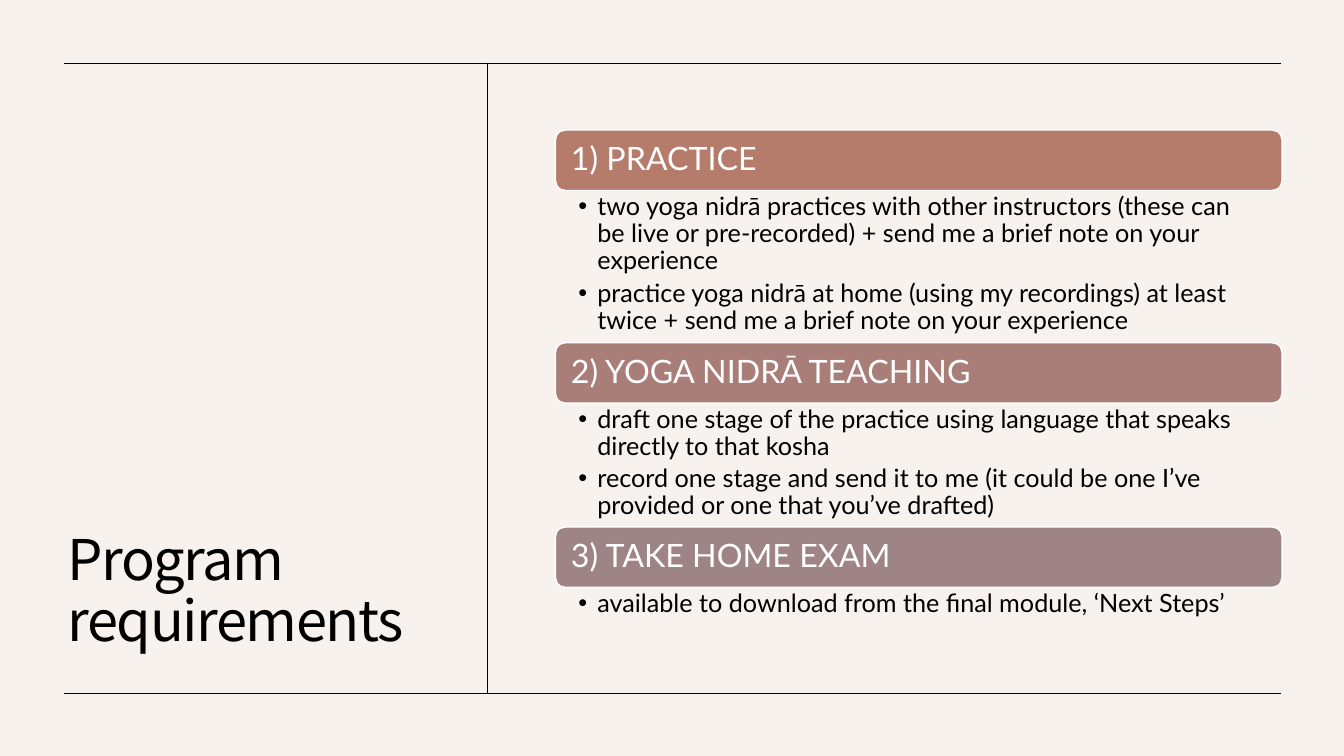
from lxml.etree import SubElement
from pptx import Presentation
from pptx.dml.color import RGBColor
from pptx.enum.shapes import MSO_CONNECTOR, MSO_SHAPE
from pptx.enum.text import MSO_ANCHOR, MSO_AUTO_SIZE, PP_ALIGN
from pptx.oxml.ns import qn
from pptx.util import Pt

TITLE = "Program requirements"
# heading, bar colour, list height, list items
PARTS = [
    ("1) PRACTICE", "clay", 108.7, [
        "two yoga nidrā practices with other instructors (these can be live or "
        "pre-recorded) + send me a brief note on your experience",
        "practice yoga nidrā at home (using my recordings) at least twice + "
        "send me a brief note on your experience",
    ]),
    ("2) YOGA NIDRĀ TEACHING", "rose", 88.4, [
        "draft one stage of the practice using language that speaks directly "
        "to that kosha",
        "record one stage and send it to me (it could be one I’ve provided or "
        "one that you’ve drafted)",
    ]),
    ("3) TAKE HOME EXAM", "mauve", 30.2, [
        "available to download from the final module, ‘Next Steps’",
    ]),
]
COLORS = {"paper": "F7F2EE", "ink": "000000", "white": "FFFFFF",
          "clay": "B57B6B", "rose": "A97D78", "mauve": "9E8484"}

LEFT, RIGHT, TOP, BASE, SPLIT = 45.4, 915.1, 45, 495.4, 348
RULES = [(LEFT, TOP, RIGHT, TOP), (LEFT, BASE, RIGHT, BASE),
         (SPLIT, TOP, SPLIT, BASE)]
LIST_X, LIST_Y, LIST_W, BAR_H = 396.7, 92.9, 519.1, 43.2

FRAME = {"word_wrap": True, "auto_size": MSO_AUTO_SIZE.NONE}
TITLE_BOX = FRAME | {"vertical_anchor": MSO_ANCHOR.BOTTOM}
BAR_BOX = FRAME | {"vertical_anchor": MSO_ANCHOR.MIDDLE,
                   "margin_left": Pt(9), "margin_right": Pt(9),
                   "margin_top": 0, "margin_bottom": 0}
LIST_BOX = FRAME | {"vertical_anchor": MSO_ANCHOR.TOP,
                    "margin_left": Pt(16.5), "margin_right": Pt(13),
                    "margin_top": Pt(2.2), "margin_bottom": Pt(2.2)}
PARA = {"alignment": PP_ALIGN.LEFT, "line_spacing": 0.9,
        "space_before": Pt(0), "space_after": Pt(0)}
ITEM = PARA | {"space_after": Pt(3.6)}
TITLE_FONT = {"name": "Noto Sans CJK KR", "size": Pt(40), "bold": False}
BAR_FONT = {"name": "Lato", "size": Pt(23), "bold": False}
ITEM_FONT = {"name": "Lato", "size": Pt(18), "bold": False}


def apply(obj, values):
    for key, value in values.items():
        setattr(obj, key, value)


def color(name):
    return RGBColor.from_string(COLORS[name])


def paint(fill, name):
    fill.solid()
    fill.fore_color.rgb = color(name)


def place(shape, *box):
    apply(shape, dict(zip(("left", "top", "width", "height"), map(Pt, box))))


def write(shape, lines, box, para, font, tint):
    """Fill a shape with one formatted paragraph per line."""
    frame = shape.text_frame
    frame.text = "\n".join(lines)
    apply(frame, box)
    for item in frame.paragraphs:
        apply(item, para)
        run = item.runs[0]
        apply(run.font, font)
        run.font.color.rgb = color(tint)


def bullet(item):
    props = item._p.get_or_add_pPr()
    props.set("marL", str(Pt(13.5)))
    props.set("indent", str(-Pt(13.5)))
    SubElement(props, qn("a:buFont"), typeface="Arial")
    SubElement(props, qn("a:buChar"), char="•")


def add_rule(slide, ends):
    rule = slide.shapes.add_connector(MSO_CONNECTOR.STRAIGHT, *map(Pt, ends))
    rule.line.width = Pt(0.5)
    rule.line.color.rgb = color("ink")
    SubElement(rule._element.spPr, qn("a:effectLst"))


def add_bar(slide, top, text, tint):
    bar = slide.shapes.add_shape(
        MSO_SHAPE.ROUNDED_RECTANGLE, *map(Pt, (LIST_X, top, LIST_W, BAR_H)))
    bar.shadow.inherit = False
    paint(bar.fill, tint)
    bar.line.color.rgb = color("white")
    bar.line.width = Pt(1)
    write(bar, [text], BAR_BOX, PARA, BAR_FONT, "white")


def main():
    deck = Presentation()
    deck.slide_width, deck.slide_height = Pt(960), Pt(540)
    slide = deck.slides.add_slide(deck.slide_layouts.get_by_name("Comparison"))
    paint(slide.background.fill, "paper")

    title = slide.shapes.title
    place(title, 41, 71.3, 275.8, 398.9)
    write(title, [TITLE], TITLE_BOX, PARA, TITLE_FONT, "ink")
    title.text_frame.paragraphs[0].runs[0].font._element.set("spc", "-100")

    for ends in RULES:
        add_rule(slide, ends)

    holders = [h for h in slide.placeholders if h.placeholder_format.idx in range(1, 5)]
    top = LIST_Y
    for (text, tint, height, items), holder in zip(PARTS, holders):
        add_bar(slide, top, text, tint)
        place(holder, LIST_X, top + BAR_H, LIST_W, height)
        write(holder, items, LIST_BOX, ITEM, ITEM_FONT, "ink")
        for item in holder.text_frame.paragraphs:
            bullet(item)
        top += BAR_H + height

    for spare in holders[len(PARTS):]:
        spare._element.getparent().remove(spare._element)
    deck.save("out.pptx")


if __name__ == "__main__":
    main()
